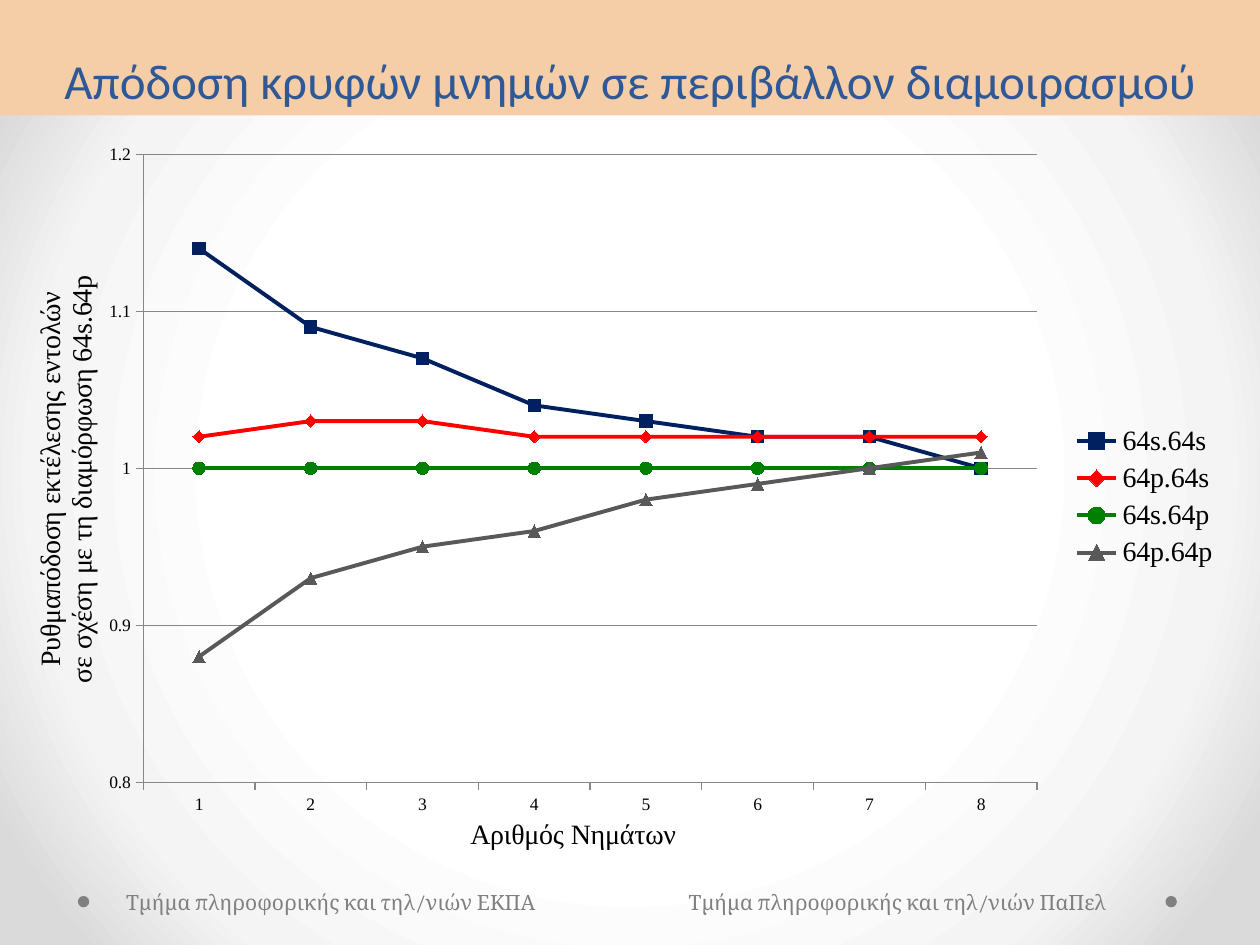
"""Build a slide with a line chart of cache throughput by thread count."""
from pptx import Presentation
from pptx.chart.data import CategoryChartData
from pptx.dml.color import RGBColor
from pptx.enum.chart import XL_CHART_TYPE, XL_LEGEND_POSITION, XL_MARKER_STYLE, XL_TICK_MARK
from pptx.enum.shapes import MSO_SHAPE
from pptx.enum.text import MSO_ANCHOR, PP_ALIGN
from pptx.oxml import parse_xml
from pptx.oxml.ns import nsdecls, qn
from pptx.util import Pt

LINE = XL_CHART_TYPE.LINE_MARKERS
RIGHT = XL_LEGEND_POSITION.RIGHT
OUT = XL_TICK_MARK.OUTSIDE
OVAL = MSO_SHAPE.OVAL
LOW = MSO_ANCHOR.BOTTOM
MID = PP_ALIGN.CENTER
MARK = XL_MARKER_STYLE

HUES = {
    "band": "F5CEA7", "title": "2F5897", "foot": "808080", "grid": "878787",
    "text": "000000", "navy": "002060", "red": "FF0000", "green": "008000",
    "gray": "595959",
}
STOPS = [(50, "FFFFFF"), (76, "F4F4F4"), (92, "DADADA")]
PLOT = {"x": 0.095, "y": 0.027, "w": 0.743, "h": 0.867}
SERIES = [
    ("64s.64s", "navy", MARK.SQUARE, [1.14, 1.09, 1.07, 1.04, 1.03, 1.02, 1.02, 1]),
    ("64p.64s", "red", MARK.DIAMOND, [1.02, 1.03, 1.03, 1.02, 1.02, 1.02, 1.02, 1.02]),
    ("64s.64p", "green", MARK.CIRCLE, [1] * 8),
    ("64p.64p", "gray", MARK.TRIANGLE, [0.88, 0.93, 0.95, 0.96, 0.98, 0.99, 1, 1.01]),
]


def put(item, **vals):
    """Set each given value as an attribute of the item."""
    for key, val in vals.items():
        setattr(item, key, val)


def hue(name):
    """Return the named colour."""
    return RGBColor.from_string(HUES[name])


def paint(fill, name):
    """Make a fill solid in the named colour."""
    fill.solid()
    fill.fore_color.rgb = hue(name)


def style(font, face, size, name="text"):
    """Format a font."""
    put(font, name=face, size=Pt(size), bold=False)
    font.color.rgb = hue(name)


def box(x, y, w, h):
    """Return a position and size given in points."""
    return Pt(x), Pt(y), Pt(w), Pt(h)


def back(slide):
    """Give the slide a round gradient background."""
    slide.background.fill.solid()
    old = slide.element.find(".//" + qn("p:bgPr")).find(qn("a:solidFill"))
    stops = "".join(
        f'<a:gs pos="{pos * 1000}"><a:srgbClr val="{tone}"/></a:gs>' for pos, tone in STOPS
    )
    grad = parse_xml(
        f'<a:gradFill {nsdecls("a")} rotWithShape="1"><a:gsLst>{stops}</a:gsLst>'
        '<a:path path="circle"><a:fillToRect l="50000" t="50000" r="50000" b="50000"/>'
        "</a:path></a:gradFill>"
    )
    old.getparent().replace(old, grad)


def head(slide, text):
    """Fill the title band."""
    title = slide.shapes.title
    put(title, left=0, top=0, width=Pt(720), height=Pt(66), text=text)
    paint(title.fill, "band")
    put(title.text_frame, vertical_anchor=LOW, word_wrap=True)
    para = title.text_frame.paragraphs[0]
    para.alignment = MID
    style(para.runs[0].font, "Calibri", 28, "title")


def dot(slide, x):
    """Add a footer dot."""
    shape = slide.shapes.add_shape(OVAL, *box(x, 512, 6.5, 6.5))
    shape.shadow.inherit = False
    paint(shape.fill, "foot")
    shape.line.fill.background()


def note(slide, x, w, text):
    """Add a footer label."""
    frame = slide.shapes.add_textbox(*box(x, 504.5, w, 22)).text_frame
    put(frame, word_wrap=True, text=text)
    style(frame.paragraphs[0].runs[0].font, "Cambria", 12, "foot")


def axis(item, text):
    """Format a chart axis and its title."""
    put(item, has_title=True, major_tick_mark=OUT)
    style(item.tick_labels.font, "Times New Roman", 10)
    item.format.line.color.rgb = hue("grid")
    frame = item.axis_title.text_frame
    frame.text = text
    for para in frame.paragraphs:
        style(para.runs[0].font, "Times New Roman", 16)


def place(chart):
    """Fix the inner plot area within the chart."""
    area = chart.element.find(".//" + qn("c:plotArea"))
    for old in area.findall(qn("c:layout")):
        area.remove(old)
    modes = '<c:xMode val="edge"/><c:yMode val="edge"/>'
    sizes = "".join(f'<c:{key} val="{val}"/>' for key, val in PLOT.items())
    area.insert(0, parse_xml(
        f'<c:layout {nsdecls("c")}><c:manualLayout><c:layoutTarget val="inner"/>'
        f"{modes}{sizes}</c:manualLayout></c:layout>"
    ))


def graph(slide):
    """Add the line chart."""
    data = CategoryChartData()
    data.categories = [str(num) for num in range(1, 9)]
    for name, _, _, vals in SERIES:
        data.add_series(name, vals)
    chart = slide.shapes.add_chart(LINE, *box(16.5, 77, 687.5, 414), data).chart
    put(chart, has_title=False, has_legend=True)
    style(chart.font, "Cambria", 10)
    put(chart.legend, position=RIGHT, include_in_layout=False)
    style(chart.legend.font, "Times New Roman", 16)
    axis(chart.category_axis, "Αριθμός Νημάτων")
    rate = chart.value_axis
    axis(rate, "Ρυθμαπόδοση εκτέλεσης εντολών\nσε σχέση με τη διαμόρφωση 64s.64p")
    put(rate, minimum_scale=0.8, maximum_scale=1.2, major_unit=0.1, has_major_gridlines=True)
    rate.major_gridlines.format.line.color.rgb = hue("grid")
    chart.plots[0].vary_by_categories = False
    for item, (_, tone, mark, _) in zip(chart.plots[0].series, SERIES):
        item.smooth = False
        item.format.line.width = Pt(2.25)
        item.format.line.color.rgb = hue(tone)
        put(item.marker, style=mark, size=7)
        paint(item.marker.format.fill, tone)
        item.marker.format.line.color.rgb = hue(tone)
    place(chart)


def main():
    """Build and save the slide."""
    deck = Presentation()
    put(deck, slide_width=Pt(720), slide_height=Pt(540))
    slide = deck.slides.add_slide(deck.slide_layouts[5])
    back(slide)
    head(slide, "Απόδοση κρυφών μνημών σε περιβάλλον διαμοιρασμού")
    for x in (666, 44.5):
        dot(slide, x)
    note(slide, 65, 283.5, "Τμήμα πληροφορικής και τηλ/νιών ΕΚΠΑ")
    note(slide, 386.5, 258, "Τμήμα πληροφορικής και τηλ/νιών ΠαΠελ")
    graph(slide)
    deck.save("out.pptx")


if __name__ == "__main__":
    main()
